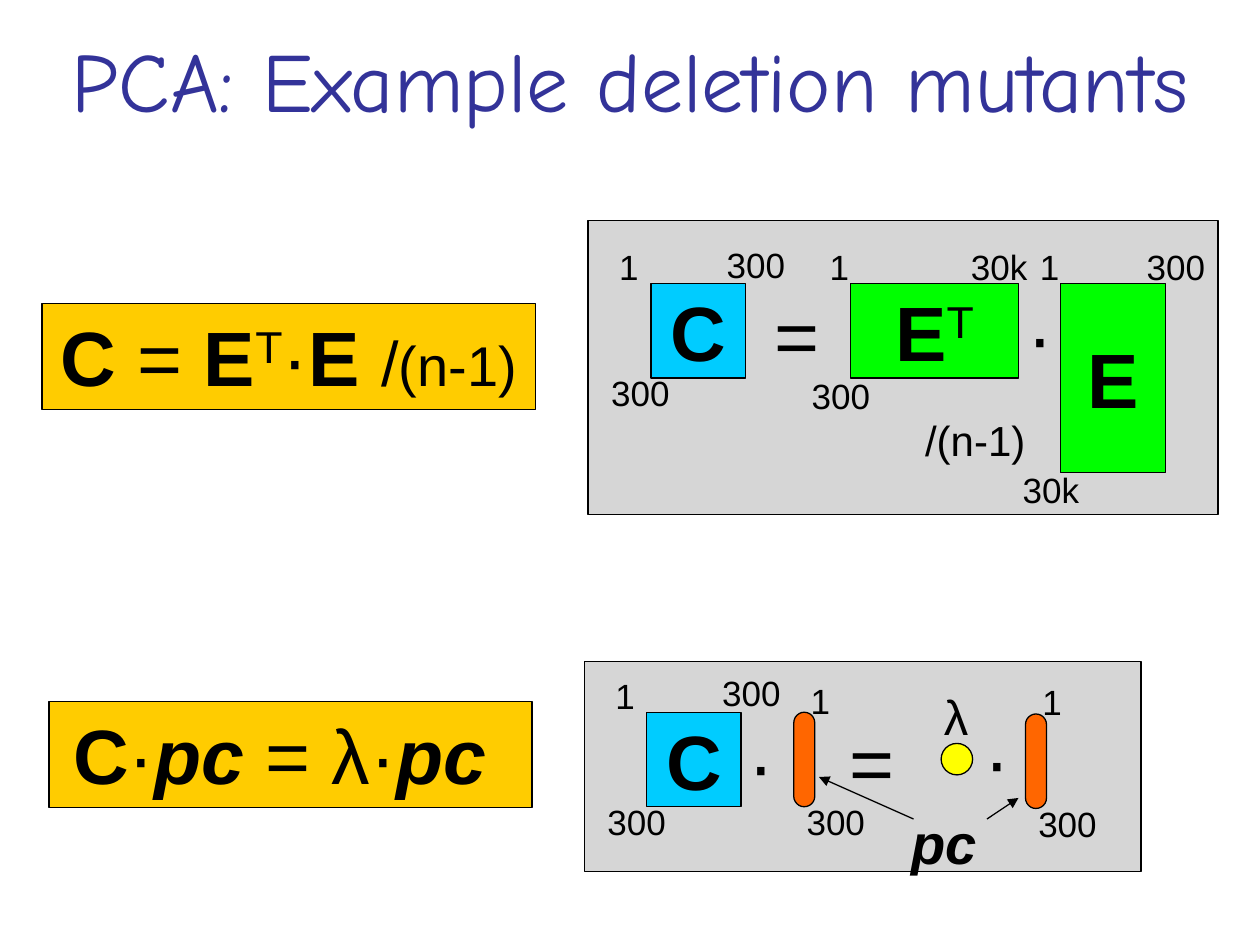
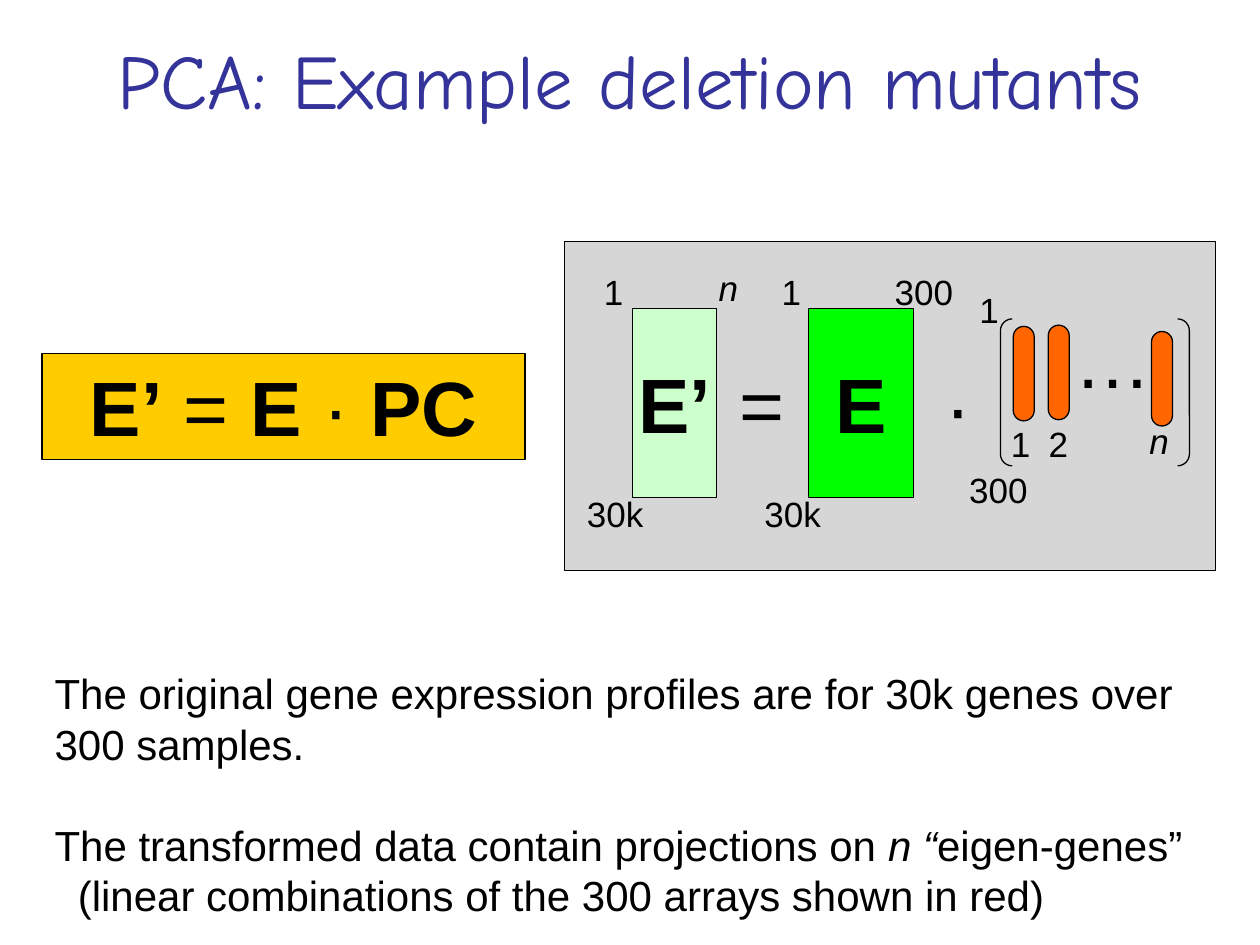
import lxml.etree
import pptx
import pptx.dml.color
import pptx.enum.shapes
import pptx.enum.text
import pptx.oxml.ns
import pptx.util

Pt = pptx.util.Pt
RGB = pptx.dml.color.RGBColor
KIND = pptx.enum.shapes.MSO_SHAPE
ANCHOR = pptx.enum.text.MSO_ANCHOR
ALIGN = pptx.enum.text.PP_ALIGN
qn = pptx.oxml.ns.qn

# Colours
BLACK = RGB(0, 0, 0)
NAVY = RGB(0x33, 0x33, 0x99)
GREY = RGB(0x80, 0x80, 0x80)
GOLD = RGB(0xFF, 0xCC, 0x00)
CYAN = RGB(0x00, 0xCC, 0xFF)
GREEN = RGB(0x00, 0xFF, 0x00)
MINT = RGB(0xCC, 0xFF, 0xCC)
ORANGE = RGB(0xFF, 0x66, 0x00)
YELLOW = RGB(0xFF, 0xFF, 0x00)

# Sizes in points
BIG = 44
SMALL = 20
TITLE = "PCA: Example deletion mutants"


class Deck:
    """Holds the shared style and the current slide."""

    def __init__(self):
        self.show = pptx.Presentation()
        self.show.slide_width = Pt(720)
        self.show.slide_height = Pt(540)
        self.slide = None

    def start(self, layout, size):
        self.slide = self.show.slides.add_slide(self.show.slide_layouts[layout])
        title = self.slide.shapes.title
        self.place(title, 0, 0, 720, 90)
        self.frame(title, ANCHOR.MIDDLE, True)
        self.label(title.text_frame.paragraphs[0], [(TITLE, "")], size,
                   font="Comic Neue", color=NAVY)

    def place(self, shape, *box):
        for name, value in zip(("left", "top", "width", "height"), box):
            setattr(shape, name, Pt(value))

    def frame(self, shape, anchor, wrap):
        form = {"vertical_anchor": anchor, "word_wrap": wrap,
                "auto_size": pptx.enum.text.MSO_AUTO_SIZE.NONE}
        for name, value in form.items():
            setattr(shape.text_frame, name, value)

    def label(self, para, runs, size, align=ALIGN.CENTER, font="Arial", color=BLACK):
        """Each run is text, flags (b bold, i italic, ^ raised) and maybe a size."""
        para.alignment = align
        for text, flags, *own in runs:
            run = para.add_run()
            run.text = text
            form = {"name": font, "size": Pt(own[0] if own else size),
                    "bold": "b" in flags, "italic": "i" in flags}
            for name, value in form.items():
                setattr(run.font, name, value)
            run.font.color.rgb = color
            if "^" in flags:
                run.font._element.set("baseline", "30000")

    def shape(self, kind, box, fill=None, round=None):
        shape = self.slide.shapes.add_shape(kind, *map(Pt, box))
        shape.shadow.inherit = False
        shape.line.color.rgb = BLACK
        shape.line.width = Pt(0.75)
        if fill is None:
            shape.fill.background()
        else:
            shape.fill.solid()
            shape.fill.fore_color.rgb = fill
        if round is not None:
            shape.adjustments[0] = round
        return shape

    def panel(self, *box):
        shape = self.shape(KIND.RECTANGLE, box, GREY)
        tint = shape._element.spPr.find(qn("a:solidFill"))[0]
        lxml.etree.SubElement(tint, qn("a:alpha")).set("val", "32000")

    def rule(self, runs, *box):
        shape = self.shape(KIND.RECTANGLE, box, GOLD)
        self.frame(shape, ANCHOR.TOP, True)
        self.label(shape.text_frame.paragraphs[0], runs, BIG)

    def matrix(self, runs, fill, *box):
        shape = self.shape(KIND.RECTANGLE, box, fill)
        self.frame(shape, ANCHOR.MIDDLE, False)
        self.label(shape.text_frame.paragraphs[0], runs, BIG)

    def bar(self, x, y):
        self.shape(KIND.ROUNDED_RECTANGLE, (x, y, 12, 54), ORANGE, 0.5)

    def tag(self, text, x, y, width=None, size=SMALL, flags=""):
        width = width or 15 + 11 * len(text)
        high = 1.2 * size + 7.2
        box = self.slide.shapes.add_textbox(*map(Pt, (x, y, width, high)))
        self.frame(box, ANCHOR.TOP, False)
        self.label(box.text_frame.paragraphs[0], [(text, flags)], size)

    def arrow(self, *ends):
        line = self.slide.shapes.add_connector(
            pptx.enum.shapes.MSO_CONNECTOR.STRAIGHT, *map(Pt, ends))
        line.line.color.rgb = BLACK
        line.line.width = Pt(0.75)
        edge = line._element.spPr.find(qn("a:ln"))
        lxml.etree.SubElement(edge, qn("a:tailEnd")).set("type", "triangle")
        lxml.etree.SubElement(line._element.spPr, qn("a:effectLst"))

    def prose(self, rows, *box):
        """Each row is its runs, left indent and space after."""
        body = self.slide.placeholders[1]
        self.place(body, *box)
        self.frame(body, ANCHOR.TOP, True)
        text = body.text_frame
        for spot, (runs, indent, after) in enumerate(rows):
            para = text.add_paragraph() if spot else text.paragraphs[0]
            self.label(para, runs, 24, ALIGN.LEFT)
            para.space_before = Pt(0)
            para.space_after = Pt(after)
            props = para._p.get_or_add_pPr()
            props.set("marL", str(Pt(indent)))
            props.set("indent", "0")
            lxml.etree.SubElement(props, qn("a:buNone"))


def factor(deck):
    """Covariance matrix and its eigenvectors."""
    deck.start(5, 48)

    # Covariance
    deck.panel(336, 126, 360, 168)
    deck.rule([("C", "b"), (" = ", ""), ("E", "b"), ("T", "^"), ("·", ""),
               ("E ", "b"), ("/", "", 36), ("(n-1)", "", 32)],
              24, 173.5, 282, 60.5)
    deck.matrix([("C", "b")], CYAN, 372, 162, 54, 54)
    deck.matrix([("E", "b"), ("T", "^")], GREEN, 486, 162, 96, 54)
    deck.matrix([("E", "b")], GREEN, 606, 162, 60, 108)
    for text, x, y in (
            ("1", 346.3, 136.8), ("300", 408, 135.4), ("300", 342, 208.8),
            ("1", 466.6, 136.8), ("30k", 547, 136.8), ("300", 456.5, 210.2),
            ("1", 586.8, 136.8), ("300", 648, 136.8), ("30k", 576.5, 264.2)):
        deck.tag(text, x, y)
    deck.tag("=", 435.6, 160.6, 40, BIG)
    deck.tag("·", 581, 160.6, 26.6, BIG)
    deck.tag("/(n-1)", 521.3, 233.3, 72, 24)

    # Eigenvectors
    deck.panel(334, 378, 318, 120)
    deck.rule([("C", "b"), ("·", ""), ("pc", "bi"), (" = λ·", ""), ("pc ", "bi")],
              28, 401, 276, 60.5)
    deck.matrix([("C", "b")], CYAN, 369.5, 407, 54, 54)
    deck.bar(453.6, 407)
    deck.bar(586, 408)
    deck.shape(KIND.OVAL, (537.8, 424.8, 18, 18), YELLOW)
    for text, x, y in (
            ("1", 344.2, 381.6), ("300", 405.4, 380.2), ("300", 339.8, 453.6),
            ("1", 455.8, 384.5), ("300", 453.6, 453.6),
            ("1", 588.2, 385.2), ("300", 586, 455)):
        deck.tag(text, x, y)
    deck.tag("·", 422, 405.4, 26.6, BIG)
    deck.tag("=", 478, 404.6, 40, BIG)
    deck.tag("·", 556.6, 403.2, 26.6, BIG)
    deck.tag("λ", 532, 388.8, 28.8, 28)
    deck.tag("pc", 513.4, 458.6, 51.8, 32, "bi")
    deck.arrow(564, 468, 582, 456)
    deck.arrow(522, 468, 468, 444)


def project(deck):
    """Data projected on the components."""
    deck.start(1, 44)
    deck.panel(322.5, 138, 372, 188)
    deck.rule([("E’", "b"), (" = ", ""), ("E ", "b"), ("·", ""), (" PC", "b")],
              24, 202, 276, 60.5)

    # Data matrices
    deck.matrix([("E’", "b")], MINT, 361.5, 176.4, 48, 108)
    deck.matrix([("E", "b")], GREEN, 462.2, 176.4, 60, 108)
    for text, x, y in (
            ("1", 337.7, 151.2), ("30k", 327.5, 278),
            ("1", 439.2, 151.2), ("300", 504, 151.2), ("30k", 429, 278)):
        deck.tag(text, x, y)
    deck.tag("n", 403.2, 149, flags="i")
    deck.tag("=", 415.4, 200.2, 40, BIG)
    deck.tag("·", 534.2, 201.6, 26.6, BIG)

    # Component vectors
    deck.shape(KIND.DOUBLE_BRACKET, (571.7, 182.2, 108, 84), round=0.08)
    for x, y in ((579, 186.5), (599, 185.8), (658, 189.4)):
        deck.bar(x, y)
    for text, x, y in (("1", 552.2, 161.3), ("300", 546.5, 264.2),
                       ("1", 570.2, 237.6), ("2", 591.8, 237.6)):
        deck.tag(text, x, y)
    deck.tag("n", 649.4, 236.2, flags="i")
    deck.tag("…", 607, 174.2, 58.3, BIG)

    # Explanation
    deck.prose([
        ([("The original gene expression profiles are for 30k genes over "
           "300 samples.", "")], 0, 28.8),
        ([("The transformed data contain projections on ", ""), ("n “", "i"),
          ("eigen-genes”", "")], 0, 0),
        ([("(linear combinations of the 300 arrays shown in red)", "")], 13.3, 0),
    ], 24, 378, 696, 152.6)


def main():
    deck = Deck()
    factor(deck)
    project(deck)
    deck.show.save("out.pptx")


if __name__ == "__main__":
    main()
